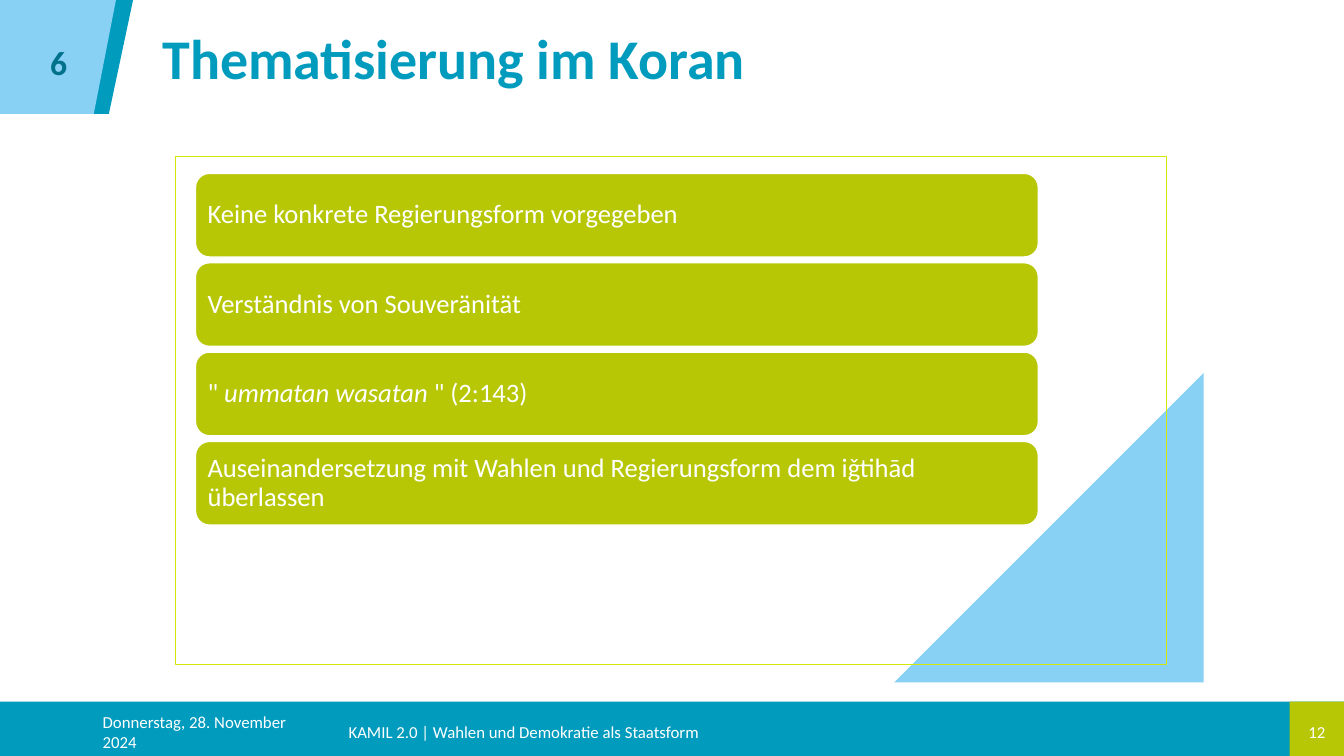
from dataclasses import dataclass

from pptx import Presentation
from pptx.dml.color import RGBColor
from pptx.enum.shapes import MSO_SHAPE as Preset
from pptx.enum.text import MSO_ANCHOR as Anchor, MSO_AUTO_SIZE as AutoSize, PP_ALIGN as Align
from pptx.util import Inches, Pt


@dataclass(frozen=True)
class Theme:
    font: str = "Calibri"
    teal: str = "009BBD"
    dark_teal: str = "00718A"
    sky: str = "88D1F5"
    green: str = "B7C706"
    lime: str = "D5E708"
    white: str = "FFFFFF"
    title_size: int = 40
    number_size: int = 24
    item_size: int = 19
    footer_size: int = 12
    line_width: int = 1


@dataclass(frozen=True)
class Box:
    left: int
    top: int
    width: int
    height: int

    def point(self, x, y):
        """Position at x and y percent of this box."""
        return round(self.left + self.width * x / 100), round(self.top + self.height * y / 100)

    def inner(self, x, y, width, height):
        """Inner box, given in percent of this one."""
        return Box(*self.point(x, y), round(self.width * width / 100), round(self.height * height / 100))

    def bounds(self):
        return self.left, self.top, self.width, self.height


THEME = Theme()
TITLE = "Thematisierung im Koran"
CHAPTER = "6"
DATE = "Donnerstag, 28. November 2024"
FOOTER = "KAMIL 2.0 | Wahlen und Demokratie als Staatsform"
PAGE = "12"
# Each item is a list of (text, italic) runs.
ITEMS = [
    [("Keine konkrete Regierungsform vorgegeben", False)],
    [("Verständnis von Souveränität", False)],
    [('" ', False), ("ummatan wasatan ", True), ('" (2:143)', False)],
    [("Auseinandersetzung mit Wahlen und Regierungsform dem iǧtihād überlassen", False)],
]


def paint(shape, fill=None, line=None):
    shape.shadow.inherit = False
    if fill:
        shape.fill.solid()
        shape.fill.fore_color.rgb = RGBColor.from_string(fill)
    else:
        shape.fill.background()
    if line:
        shape.line.color.rgb = RGBColor.from_string(line)
        shape.line.width = Pt(THEME.line_width)
    else:
        shape.line.fill.background()


def add_preset(slide, preset, box, fill=None, line=None):
    shape = slide.shapes.add_shape(preset, *box.bounds())
    paint(shape, fill, line)
    return shape


def add_outline(slide, box, corners, fill):
    start, *others = [box.point(*corner) for corner in corners]
    builder = slide.shapes.build_freeform(*start)
    builder.add_line_segments(others, close=True)
    paint(builder.convert_to_shape(), fill)


def write(shape, runs, size, color, align=Align.LEFT, bold=False):
    frame = shape.text_frame
    frame.word_wrap = True
    frame.auto_size = AutoSize.NONE
    frame.vertical_anchor = Anchor.MIDDLE
    paragraph = frame.paragraphs[0]
    paragraph.alignment = align
    for text, italic in runs:
        run = paragraph.add_run()
        run.text = text
        if italic:
            run.font.italic = True
    font = paragraph.font
    font.name, font.size, font.bold = THEME.font, Pt(size), bold
    font.color.rgb = RGBColor.from_string(color)
    return paragraph


def add_footer(slide, box):
    add_preset(slide, Preset.RECTANGLE, box, THEME.teal)
    add_preset(slide, Preset.RECTANGLE, box.inner(95.95, 0, 4.05, 100), THEME.green)
    for text, left, width, align in [
        (DATE, 6.9, 17.7, Align.LEFT),
        (FOOTER, 25.2, 67.97, Align.LEFT),
        (PAGE, 95.95, 4.05, Align.CENTER),
    ]:
        text_box = slide.shapes.add_textbox(*box.inner(left, 18.5, width, 74).bounds())
        write(text_box, [(text, False)], THEME.footer_size, THEME.white, align)


def add_header(slide, box):
    add_outline(slide, box, [(0.83, 0), (9.9, 0), (8.1, 100), (0.83, 100)], THEME.teal)
    add_outline(slide, box, [(0, 0), (8.63, 0), (6.98, 100), (0, 100)], THEME.sky)
    number = add_preset(slide, Preset.RECTANGLE, box.inner(1.88, 30, 4.95, 48.7), THEME.sky)
    write(number, [(CHAPTER, False)], THEME.number_size, THEME.dark_teal, Align.CENTER, bold=True)
    title = slide.shapes.title
    title.left, title.top, title.width, title.height = box.inner(11.33, 20.35, 52.6, 67.26).bounds()
    paragraph = write(title, [(TITLE, False)], THEME.title_size, THEME.teal, bold=True)
    paragraph.line_spacing = 0.9


def add_content(slide, box):
    triangle = add_preset(slide, Preset.RIGHT_TRIANGLE, box.inner(72.53, 42.66, 31.23, 60.9), THEME.sky)
    triangle._element.spPr.xfrm.set("flipH", "1")
    add_preset(slide, Preset.RECTANGLE, box, line=THEME.lime)
    for row, runs in enumerate(ITEMS):
        item = add_preset(slide, Preset.ROUNDED_RECTANGLE,
                          box.inner(2.03, 3.37 + row * 17.59, 85.05, 16.47), THEME.green, THEME.white)
        frame = item.text_frame
        frame.margin_left = frame.margin_right = frame.margin_top = frame.margin_bottom = Inches(0.08)
        write(item, runs, THEME.item_size, THEME.white).line_spacing = 0.9


def main():
    presentation = Presentation()
    presentation.slide_width, presentation.slide_height = Inches(13.33), Inches(7.5)
    slide = presentation.slides.add_slide(presentation.slide_layouts[5])
    page = Box(0, 0, presentation.slide_width, presentation.slide_height)
    add_footer(slide, page.inner(0, 92.8, 100, 7.2))
    add_content(slide, page.inner(13.05, 20.67, 73.74, 67.2))
    add_header(slide, page.inner(0, 0, 100, 15.07))
    presentation.save("out.pptx")


if __name__ == "__main__":
    main()
